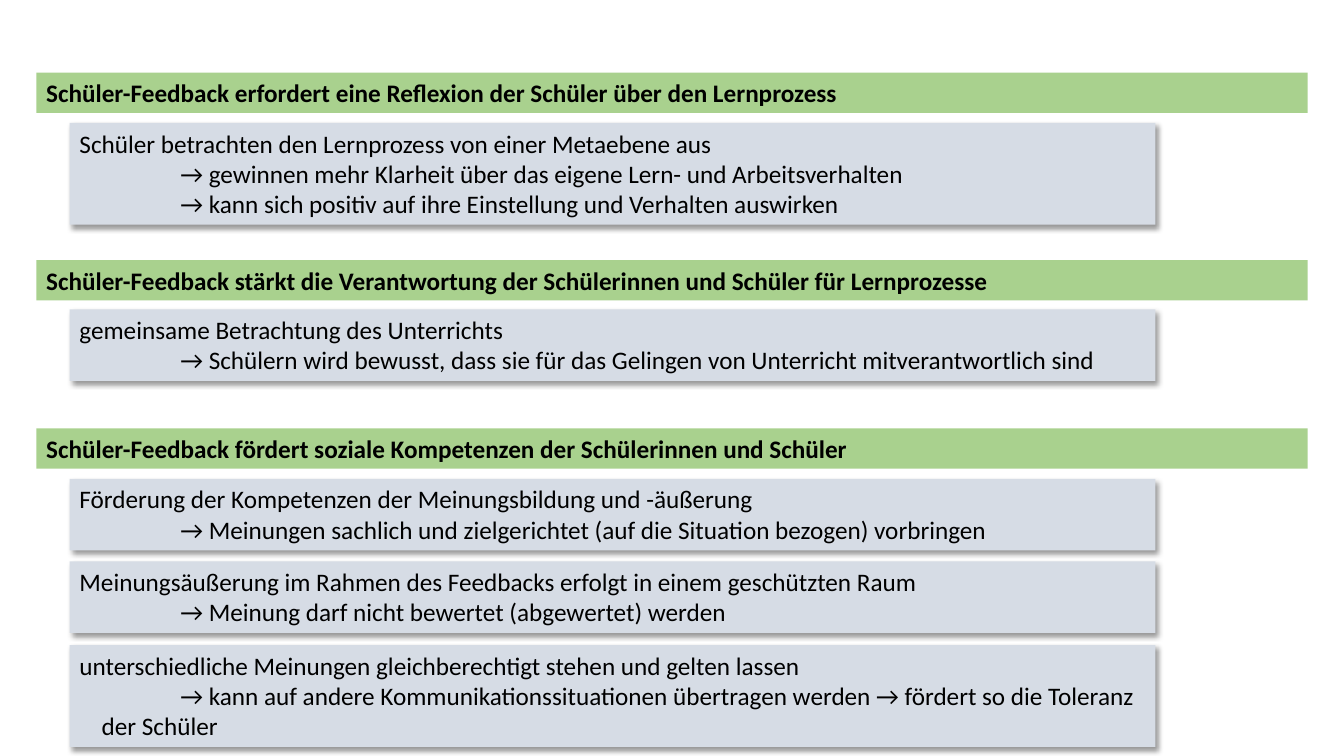
from lxml import etree
from pptx import Presentation
from pptx.dml.color import RGBColor
from pptx.enum.text import MSO_AUTO_SIZE
from pptx.oxml import parse_xml
from pptx.util import Inches, Pt

GREEN = RGBColor(0xA9, 0xD1, 0x8E)
GREY = RGBColor(0xD6, 0xDC, 0xE5)
BLACK = RGBColor(0, 0, 0)
GROW = MSO_AUTO_SIZE.SHAPE_TO_FIT_TEXT
SHADOW = """<a:outerShdw
    xmlns:a="http://schemas.openxmlformats.org/drawingml/2006/main"
    blurRad="50800" dist="38100" dir="2700000" algn="tl" rotWithShape="0">
  <a:srgbClr val="000000"><a:alpha val="40000"/></a:srgbClr>
</a:outerShdw>"""

# Each section: top, heading, then its notes as (top, lines)
SECTIONS = [
    (0.72, "Schüler-Feedback erfordert eine Reflexion der Schüler über den Lernprozess", [
        (1.22, ["Schüler betrachten den Lernprozess von einer Metaebene aus",
                "→ gewinnen mehr Klarheit über das eigene Lern- und Arbeitsverhalten",
                "→ kann sich positiv auf ihre Einstellung und Verhalten auswirken"]),
    ]),
    (2.58, "Schüler-Feedback stärkt die Verantwortung der Schülerinnen und Schüler für Lernprozesse", [
        (3.07, ["gemeinsame Betrachtung des Unterrichts",
                "→ Schülern wird bewusst, dass sie für das Gelingen von Unterricht "
                "mitverantwortlich sind"]),
    ]),
    (4.25, "Schüler-Feedback fördert soziale Kompetenzen der Schülerinnen und Schüler", [
        (4.75, ["Förderung der Kompetenzen der Meinungsbildung und -äußerung",
                "→ Meinungen sachlich und zielgerichtet (auf die Situation bezogen) vorbringen"]),
        (5.57, ["Meinungsäußerung im Rahmen des Feedbacks erfolgt in einem geschützten Raum",
                "→ Meinung darf nicht bewertet (abgewertet) werden"]),
        (6.4, ["unterschiedliche Meinungen gleichberechtigt stehen und gelten lassen",
               "→ kann auf andere Kommunikationssituationen übertragen werden "
               "→ fördert so die Toleranz der Schüler"]),
    ]),
]


def add_box(left, top, width, height, color, lines, bold=False):
    box = slide.shapes.add_textbox(Inches(left), Inches(top), Inches(width), Inches(height))
    box.fill.solid()
    box.fill.fore_color.rgb = color
    frame = box.text_frame
    frame.word_wrap = True
    frame.auto_size = GROW
    frame.text = "\n".join(lines)
    for para in frame.paragraphs:
        font = para.font
        font.name = "Calibri"
        font.size = Pt(18)
        font.bold = bold
        font.color.rgb = BLACK
    return box


prs = Presentation()
prs.slide_width = Inches(13.33)
prs.slide_height = Inches(7.5)
slide = prs.slides.add_slide(prs.slide_layouts[6])

for top, heading, notes in SECTIONS:
    add_box(0.36, top, 12.61, 0.4, GREEN, [heading], bold=True)
    for note_top, lines in notes:
        height = 0.71 if note_top in (3.07, 4.75, 5.57) else 1.01
        note = add_box(0.69, note_top, 10.77, height, GREY, lines)
        for para in note.text_frame.paragraphs[1:]:
            props = para._p.get_or_add_pPr()
            props.set("marL", str(Inches(0.22)))
            props.set("indent", str(Inches(0.78)))
        note.shadow.inherit = False
        effects = note._element.spPr.find("{*}effectLst")
        effects.append(parse_xml(SHADOW))

prs.save("out.pptx")
